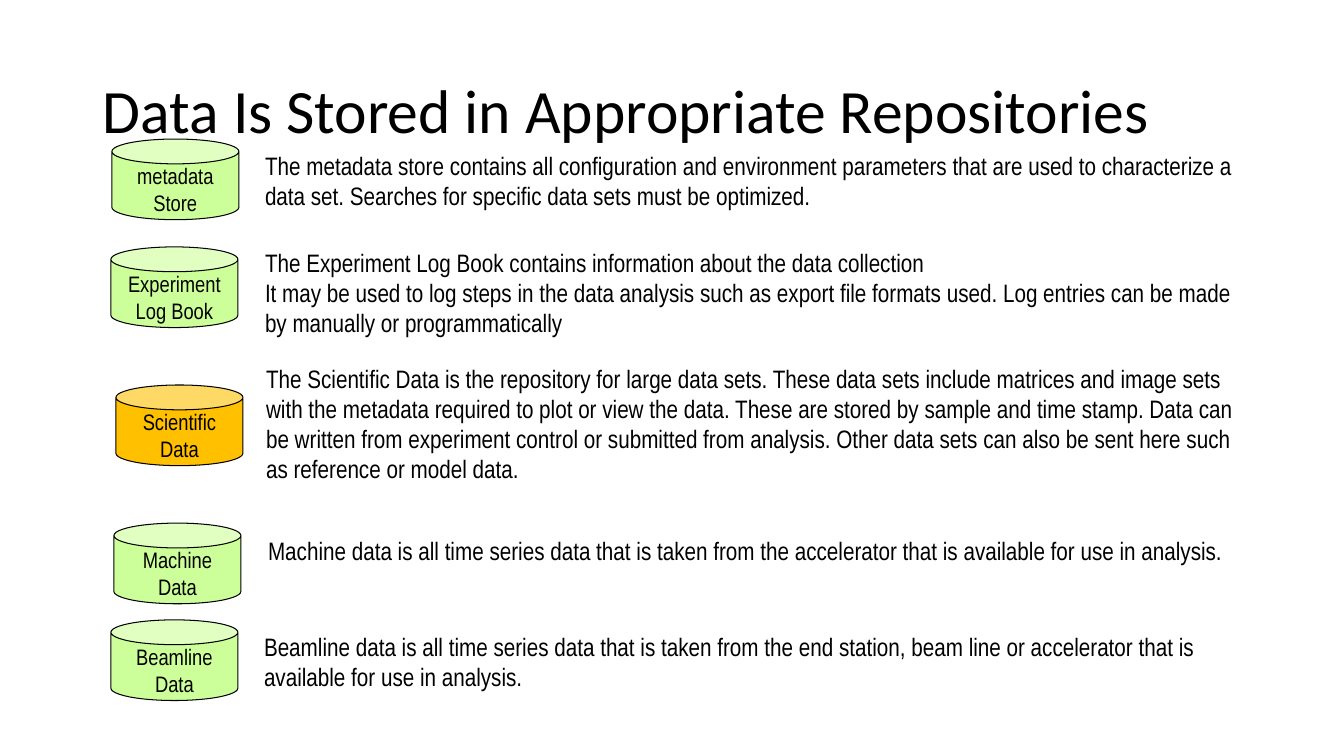
from dataclasses import dataclass

from pptx import Presentation
from pptx.dml.color import RGBColor
from pptx.enum.shapes import MSO_SHAPE as Shape
from pptx.enum.text import MSO_ANCHOR as Anchor, MSO_AUTO_SIZE as AutoSize, PP_ALIGN as Align
from pptx.util import Inches, Pt


@dataclass(frozen=True)
class Theme:
    ink: RGBColor = RGBColor(0x00, 0x00, 0x00)
    green: RGBColor = RGBColor(0xCC, 0xFF, 0x99)
    amber: RGBColor = RGBColor(0xFF, 0xC0, 0x00)
    heading_font: str = "Calibri"
    body_font: str = "Arial Narrow"
    title_size: int = 44
    body_size: int = 18
    label_size: int = 16
    outline: float = 0.75


@dataclass(frozen=True)
class Repository:
    label: str
    description: str
    can_at: tuple  # left, top
    text_box: tuple  # left, top, width, height
    fill: RGBColor


THEME = Theme()
SLIDE_WIDTH, SLIDE_HEIGHT = 13.33, 7.5
TITLE_BOX = (0.92, 0.4, 11.5, 1.45)
CAN_WIDTH, CAN_HEIGHT, CAN_RIM = 1.26, 0.8, 0.308
LABEL_DROP, LABEL_HEIGHT = 0.18, 0.64

REPOSITORIES = [
    Repository(
        "metadata Store",
        "The metadata store contains all configuration and environment parameters that are used "
        "to characterize a data set. Searches for specific data sets must be optimized.",
        (1.11, 1.38), (2.53, 1.44, 9.88, 0.71), THEME.green),
    Repository(
        "Experiment\nLog Book",
        "The Experiment Log Book contains information about the data collection\n"
        "It may be used to log steps in the data analysis such as export file formats used. "
        "Log entries can be made by manually or programmatically",
        (1.1, 2.45), (2.53, 2.4, 9.89, 1.01), THEME.green),
    Repository(
        "Scientific Data",
        "The Scientific Data is the repository for large data sets. These data sets include "
        "matrices and image sets with the metadata required to plot or view the data. These are "
        "stored by sample and time stamp. Data can be written from experiment control or "
        "submitted from analysis. Other data sets can also be sent here such as reference or "
        "model data.",
        (1.15, 3.82), (2.54, 3.55, 9.79, 1.31), THEME.amber),
    Repository(
        "Machine Data",
        "Machine data is all time series data that is taken from the accelerator that is "
        "available for use in analysis.",
        (1.13, 5.19), (2.56, 5.26, 9.78, 0.4), THEME.green),
    Repository(
        "Beamline Data",
        "Beamline data is all time series data that is taken from the end station, beam line or "
        "accelerator that is available for use in analysis.",
        (1.1, 6.15), (2.52, 6.21, 9.89, 0.71), THEME.green),
]


def write_text(frame, text, *, size, font, align=Align.LEFT, anchor=Anchor.TOP,
               auto_size=AutoSize.SHAPE_TO_FIT_TEXT, line_spacing=None):
    frame.text = text
    frame.word_wrap = True
    frame.auto_size = auto_size
    frame.vertical_anchor = anchor
    for paragraph in frame.paragraphs:
        paragraph.alignment = align
        paragraph.line_spacing = line_spacing
        for run in paragraph.runs:
            run.font.size = Pt(size)
            run.font.name = font
            run.font.color.rgb = THEME.ink


def add_title(slide, text, box):
    title = slide.shapes.title
    title.left, title.top, title.width, title.height = map(Inches, box)
    write_text(title.text_frame, text, size=THEME.title_size, font=THEME.heading_font,
               anchor=Anchor.MIDDLE, auto_size=AutoSize.NONE, line_spacing=0.9)


def add_labelled_can(slide, label, fill, left, top):
    """Group a can with a label that sits below its rim."""
    group = slide.shapes.add_group_shape()
    can = group.shapes.add_shape(Shape.CAN, *map(Inches, (left, top, CAN_WIDTH, CAN_HEIGHT)))
    can.adjustments[0] = CAN_RIM
    can.shadow.inherit = False
    can.fill.solid()
    can.fill.fore_color.rgb = fill
    can.line.color.rgb = THEME.ink
    can.line.width = Pt(THEME.outline)
    label_box = (left, top + LABEL_DROP, CAN_WIDTH, LABEL_HEIGHT)
    text_box = group.shapes.add_textbox(*map(Inches, label_box))
    write_text(text_box.text_frame, label, size=THEME.label_size, font=THEME.body_font,
               align=Align.CENTER)


def add_repository(slide, repository):
    add_labelled_can(slide, repository.label, repository.fill, *repository.can_at)
    text_box = slide.shapes.add_textbox(*map(Inches, repository.text_box))
    write_text(text_box.text_frame, repository.description,
               size=THEME.body_size, font=THEME.body_font)


def main():
    presentation = Presentation()
    presentation.slide_width = Inches(SLIDE_WIDTH)
    presentation.slide_height = Inches(SLIDE_HEIGHT)
    title_only = presentation.slide_layouts.get_by_name("Title Only")
    slide = presentation.slides.add_slide(title_only)
    add_title(slide, "Data Is Stored in Appropriate Repositories", TITLE_BOX)
    for repository in REPOSITORIES:
        add_repository(slide, repository)
    presentation.save("out.pptx")


if __name__ == "__main__":
    main()
